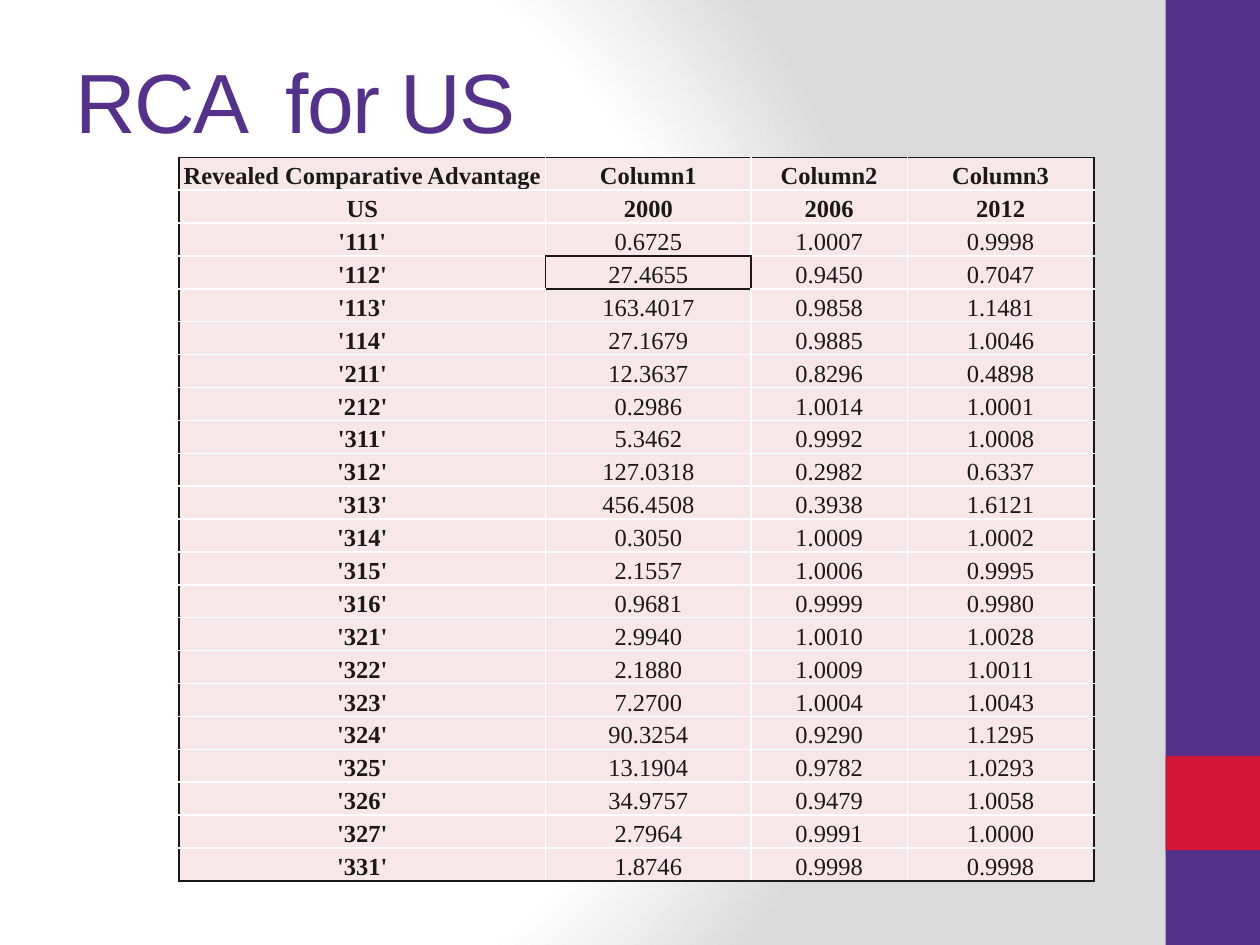
from lxml.etree import SubElement
from pptx import Presentation
from pptx.dml.color import RGBColor
from pptx.enum.shapes import MSO_SHAPE
from pptx.enum.text import MSO_ANCHOR, PP_ALIGN
from pptx.oxml import parse_xml
from pptx.oxml.ns import nsdecls, qn
from pptx.util import Cm, Pt

PURPLE, RED, WHITE, GREY = "54318A", "D21436", "FFFFFF", "DADADA"
INK, BLUSH = "1A1918", "F7E7E8"

COLUMN_WIDTHS = (7.39, 4.14, 3.15, 3.76)
HEADER_ROWS = 2
BOXED_CELL = (3, 1)
ROWS = [
    ("Revealed Comparative Advantage", "Column1", "Column2", "Column3"),
    ("US", "2000", "2006", "2012"),
    ("'111'", "0.6725", "1.0007", "0.9998"),
    ("'112'", "27.4655", "0.9450", "0.7047"),
    ("'113'", "163.4017", "0.9858", "1.1481"),
    ("'114'", "27.1679", "0.9885", "1.0046"),
    ("'211'", "12.3637", "0.8296", "0.4898"),
    ("'212'", "0.2986", "1.0014", "1.0001"),
    ("'311'", "5.3462", "0.9992", "1.0008"),
    ("'312'", "127.0318", "0.2982", "0.6337"),
    ("'313'", "456.4508", "0.3938", "1.6121"),
    ("'314'", "0.3050", "1.0009", "1.0002"),
    ("'315'", "2.1557", "1.0006", "0.9995"),
    ("'316'", "0.9681", "0.9999", "0.9980"),
    ("'321'", "2.9940", "1.0010", "1.0028"),
    ("'322'", "2.1880", "1.0009", "1.0011"),
    ("'323'", "7.2700", "1.0004", "1.0043"),
    ("'324'", "90.3254", "0.9290", "1.1295"),
    ("'325'", "13.1904", "0.9782", "1.0293"),
    ("'326'", "34.9757", "0.9479", "1.0058"),
    ("'327'", "2.7964", "0.9991", "1.0000"),
    ("'331'", "1.8746", "0.9998", "0.9998"),
]
CELL_FORMAT = {
    "vertical_anchor": MSO_ANCHOR.BOTTOM,
    "margin_left": Cm(0.03),
    "margin_right": Cm(0.03),
    "margin_top": Cm(0.03),
    "margin_bottom": 0,
}
NEIGHBOURS = {"lnL": (0, -1), "lnR": (0, 1), "lnT": (-1, 0), "lnB": (1, 0)}


def apply(target, values):
    for name, value in values.items():
        setattr(target, name, value)


def paint(fill, color):
    fill.solid()
    fill.fore_color.rgb = RGBColor.from_string(color)


def write(paragraph, text, color, values):
    run = paragraph.add_run()
    run.text = text
    apply(run.font, values)
    run.font.color.rgb = RGBColor.from_string(color)
    return run


def set_background(slide):
    stops = "".join(
        f'<a:gs pos="{position * 1000}"><a:srgbClr val="{color}"/></a:gs>'
        for position, color in ((0, WHITE), (75, WHITE), (100, GREY))
    )
    background = parse_xml(
        f'<p:bg {nsdecls("p", "a")}><p:bgPr><a:gradFill rotWithShape="1">'
        f'<a:gsLst>{stops}</a:gsLst><a:path path="circle">'
        '<a:fillToRect l="20000" t="50000" r="100000" b="50000"/></a:path>'
        "</a:gradFill><a:effectLst/></p:bgPr></p:bg>"
    )
    slide.element.cSld.insert(0, background)


def add_sidebar(slide, left, top, width, height):
    accent_top = top + height * 0.8
    for color, block_top, block_height in ((PURPLE, top, height), (RED, accent_top, width)):
        shape = slide.shapes.add_shape(
            MSO_SHAPE.RECTANGLE, Cm(left), Cm(block_top), Cm(width), Cm(block_height)
        )
        shape.shadow.inherit = False
        paint(shape.fill, color)
        shape.line.fill.background()


def add_title(slide, left, top, width, height):
    frame = slide.shapes.add_textbox(Cm(left), Cm(top), Cm(width), Cm(height)).text_frame
    apply(frame, {"word_wrap": True, "vertical_anchor": MSO_ANCHOR.MIDDLE})
    run = write(frame.paragraphs[0], "RCA  for US", PURPLE, {"name": "Arial", "size": Pt(48)})
    run.font._element.set("spc", "-100")


def set_borders(cell, position):
    row, column = position
    properties = cell._tc.get_or_add_tcPr()
    for side, (down, across) in NEIGHBOURS.items():
        neighbour = (row + down, column + across)
        inside = 0 <= neighbour[0] < len(ROWS) and 0 <= neighbour[1] < len(COLUMN_WIDTHS)
        dark = not inside or BOXED_CELL in (position, neighbour)
        line = SubElement(properties, qn(f"a:{side}"), w=str(Pt(1)))
        fill = SubElement(line, qn("a:solidFill"))
        SubElement(fill, qn("a:srgbClr"), val=INK if dark else WHITE)


def add_advantage_table(slide, left, top, height):
    table = slide.shapes.add_table(
        len(ROWS), len(COLUMN_WIDTHS), Cm(left), Cm(top), Cm(sum(COLUMN_WIDTHS)), Cm(height)
    ).table
    apply(table, {"first_row": False, "horz_banding": False})
    for column, width in zip(table.columns, COLUMN_WIDTHS):
        column.width = Cm(width)
    for row, values in enumerate(ROWS):
        table.rows[row].height = Cm(height / len(ROWS))
        for column, text in enumerate(values):
            cell = table.cell(row, column)
            apply(cell, CELL_FORMAT)
            set_borders(cell, (row, column))
            paint(cell.fill, BLUSH)
            paragraph = cell.text_frame.paragraphs[0]
            paragraph.alignment = PP_ALIGN.CENTER
            bold = row < HEADER_ROWS or column == 0
            write(paragraph, text, INK, {"name": "Times New Roman", "size": Pt(14), "bold": bold})


def main():
    presentation = Presentation()
    apply(presentation, {"slide_width": Cm(25.4), "slide_height": Cm(19.05)})
    slide = presentation.slides.add_slide(presentation.slide_layouts[6])
    set_background(slide)
    add_sidebar(slide, 23.5, 0, 1.9, 19.05)
    add_title(slide, 1.27, 0.43, 21.16, 3.18)
    add_advantage_table(slide, 3.61, 3.17, 14.6)
    presentation.save("out.pptx")


if __name__ == "__main__":
    main()
